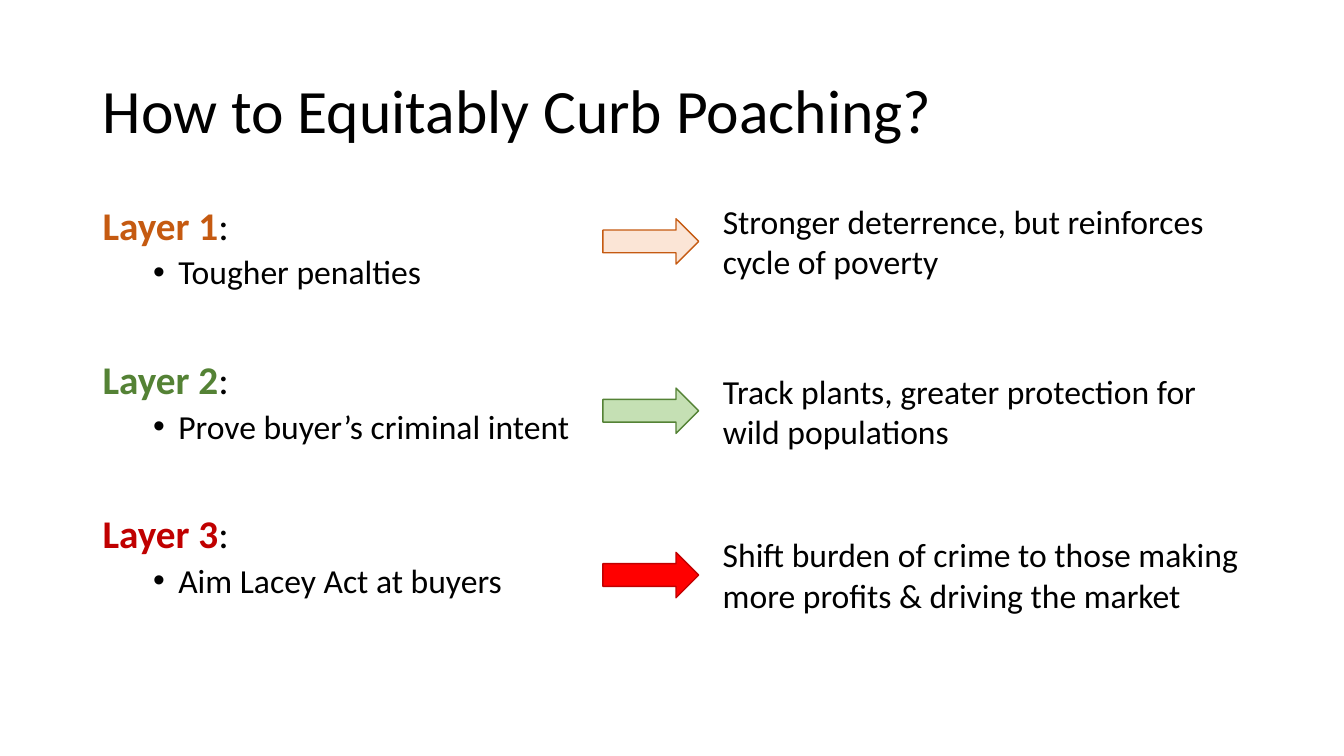
import pptx
import pptx.dml.color
import pptx.enum.shapes
import pptx.enum.text
import pptx.oxml.ns
import pptx.util
from lxml import etree

EMU_PER_PX = 9144  # 100 px to the inch
BLACK = "000000"

LAYERS = [
    {"name": "Layer 1", "step": "Tougher penalties",
     "outcome": "Stronger deterrence, but reinforces cycle of poverty",
     "dark": "C55A11", "light": "FBE5D6",
     "arrow_top": 217, "outcome_top": 194, "outcome_width": 551},
    {"name": "Layer 2", "step": "Prove buyer’s criminal intent",
     "outcome": "Track plants, greater protection for wild populations",
     "dark": "548235", "light": "C5E0B4",
     "arrow_top": 385, "outcome_top": 363, "outcome_width": 515},
    {"name": "Layer 3", "step": "Aim Lacey Act at buyers",
     "outcome": "Shift burden of crime to those making more profits & driving the market",
     "dark": "C00000", "light": "FF0000",
     "arrow_top": 548, "outcome_top": 525, "outcome_width": 534},
]


def px(length):
    return pptx.util.Emu(length * EMU_PER_PX)


def color(value):
    return pptx.dml.color.RGBColor.from_string(value)


def apply(target, values):
    for name, value in values.items():
        setattr(target, name, value)


class SlideBuilder:
    """Holds the text style and the slide being built."""

    font = "Calibri"

    def __init__(self, presentation):
        self.slide = presentation.slides.add_slide(presentation.slide_layouts[6])

    def text_box(self, left, top, width, height, anchor="TOP"):
        shape = self.slide.shapes.add_textbox(*map(px, (left, top, width, height)))
        apply(shape.text_frame, {
            "word_wrap": True,
            "vertical_anchor": getattr(pptx.enum.text.MSO_ANCHOR, anchor),
        })
        return shape.text_frame

    def paragraph(self, frame, runs, size, **spacing):
        """Fill the empty first paragraph or add one; runs are (text, colour, bold)."""
        first = frame.paragraphs[0]
        paragraph = frame.add_paragraph() if first.runs else first
        apply(paragraph, spacing)
        for text, text_color, bold in runs:
            run = paragraph.add_run()
            run.text = text
            apply(run.font, {"name": self.font, "size": pptx.util.Pt(size), "bold": bold})
            run.font.color.rgb = color(text_color)
        return paragraph

    def bullet(self, paragraph, margin, hanging):
        properties = paragraph._p.get_or_add_pPr()
        properties.set("marL", str(px(margin)))
        properties.set("indent", str(-px(hanging)))
        for tag, attribute, value in (("a:buFont", "typeface", "Arial"),
                                      ("a:buChar", "char", "•")):
            element = etree.SubElement(properties, pptx.oxml.ns.qn(tag))
            element.set(attribute, value)

    def arrow(self, left, top, width, height, fill, line):
        shape = self.slide.shapes.add_shape(
            pptx.enum.shapes.MSO_SHAPE.RIGHT_ARROW, *map(px, (left, top, width, height)))
        shape.shadow.inherit = False
        shape.fill.solid()
        shape.fill.fore_color.rgb = color(fill)
        shape.line.color.rgb = color(line)
        shape.line.width = pptx.util.Pt(1)


def main():
    presentation = pptx.Presentation()
    apply(presentation, {"slide_width": px(1333), "slide_height": px(750)})
    builder = SlideBuilder(presentation)

    title = builder.text_box(92, 40, 1150, 145, anchor="MIDDLE")
    builder.paragraph(title, [("How to Equitably Curb Poaching?", BLACK, False)], 44,
                      line_spacing=0.9)

    layers = builder.text_box(92, 200, 521, 476)
    for index, layer in enumerate(LAYERS):
        builder.paragraph(layers, [(layer["name"], layer["dark"], True), (":", BLACK, False)],
                          28, line_spacing=0.9, space_before=pptx.util.Pt(49 if index else 10))
        step = builder.paragraph(layers, [(layer["step"], BLACK, False)], 24,
                                 line_spacing=0.9, space_before=pptx.util.Pt(5), level=1)
        builder.bullet(step, margin=75, hanging=25)

        outcome = builder.text_box(707, layer["outcome_top"], layer["outcome_width"], 91)
        builder.paragraph(outcome, [(layer["outcome"], BLACK, False)], 24)
        builder.arrow(598, layer["arrow_top"], 95, 45, layer["light"], layer["dark"])

    presentation.save("out.pptx")


if __name__ == "__main__":
    main()
